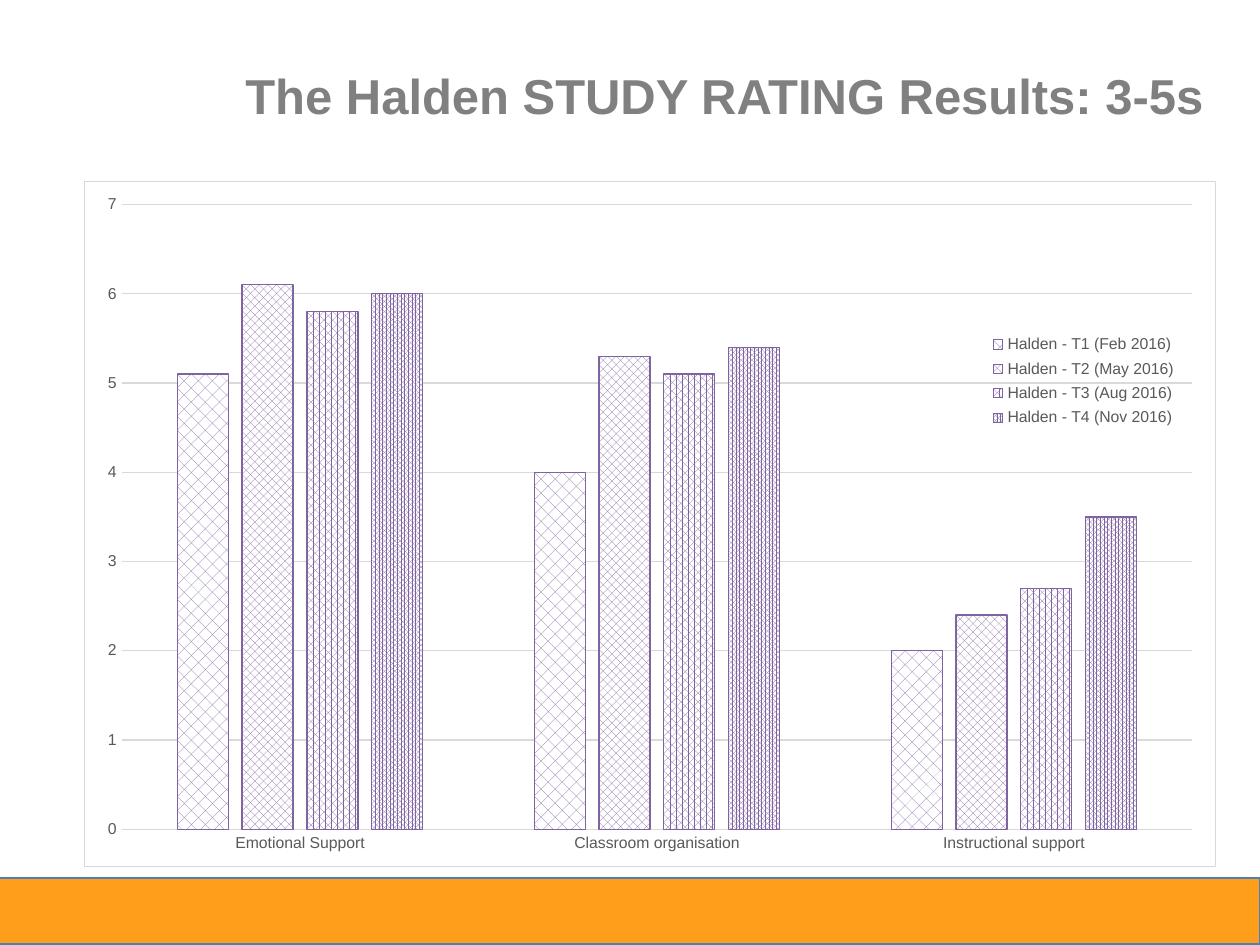
import pptx
import pptx.util
import pptx.chart.data
import pptx.dml.color
import pptx.enum.chart
import pptx.enum.dml
import pptx.enum.shapes
import pptx.oxml
import pptx.oxml.ns

SCALE = 914400 / 126
FONT = "Arial"
COLORS = {"bar": "FF9E1B", "edge": "4B7EBC", "title": "808080", "text": "595959",
          "grid": "D9D9D9", "ink": "8064A2", "white": "FFFFFF", "black": "000000"}
CATS = ["Emotional Support", "Classroom organisation", "Instructional support"]
PATS = pptx.enum.dml.MSO_PATTERN
SERIES = [
    ("Halden - T1 (Feb 2016)", (5.1, 4, 2), PATS.PERCENT_25),
    ("Halden - T2 (May 2016)", (6.1, 5.3, 2.4), PATS.PERCENT_50),
    ("Halden - T3 (Aug 2016)", (5.8, 5.1, 2.7), PATS.PERCENT_70),
    ("Halden - T4 (Nov 2016)", (6, 5.4, 3.5), PATS.PERCENT_80),
]


def px(num):
    return pptx.util.Emu(round(num * SCALE))


def place(box):
    return [px(num) for num in box]


def color(name):
    return pptx.dml.color.RGBColor.from_string(COLORS[name])


def style(font, size, name, bold=False):
    font.name = FONT
    font.size = pptx.util.Pt(size)
    font.bold = bold
    font.color.rgb = color(name)


def stroke(line, name):
    line.color.rgb = color(name)
    line.width = pptx.util.Pt(0.75)


def parse(xml):
    head, tail = xml.split(">", 1)
    close = "/" if head.endswith("/") else ""
    spaces = pptx.oxml.ns.nsdecls("a", "c")
    return pptx.oxml.parse_xml(f"{head.rstrip('/')} {spaces}{close}>{tail}")


def layout(box, part, inner=False):
    """Layout of a chart part, as shares of the chart box."""
    wide, high = box[2:]
    shares = zip("xywh", part, (wide, high, wide, high))
    rows = "".join(f'<c:{key} val="{num / full:.4f}"/>' for key, num, full in shares)
    kind = '<c:layoutTarget val="inner"/>' if inner else ""
    modes = '<c:xMode val="edge"/><c:yMode val="edge"/>'
    return parse(f"<c:layout><c:manualLayout>{kind}{modes}{rows}"
                 "</c:manualLayout></c:layout>")


def add_band(slide, box):
    band = slide.shapes.add_shape(pptx.enum.shapes.MSO_SHAPE.RECTANGLE, *place(box))
    band.fill.solid()
    band.fill.fore_color.rgb = color("bar")
    stroke(band.line, "edge")
    # Soft shadow below the band
    band.shadow.inherit = False
    glow = band.element.spPr.find(pptx.oxml.ns.qn("a:effectLst"))
    glow.append(parse(
        '<a:outerShdw blurRad="39400" dist="22900" dir="5400000" rotWithShape="0">'
        f'<a:srgbClr val="{COLORS["black"]}"><a:alpha val="35000"/></a:srgbClr>'
        "</a:outerShdw>"))


def add_title(slide, box, text):
    frame = slide.shapes.add_textbox(*place(box)).text_frame
    frame.word_wrap = True
    frame.text = text
    style(frame.paragraphs[0].runs[0].font, 28, "title", True)


def add_chart(slide, box):
    data = pptx.chart.data.CategoryChartData()
    data.categories = CATS
    for name, vals, pat in SERIES:
        data.add_series(name, vals)
    kind = pptx.enum.chart.XL_CHART_TYPE.COLUMN_CLUSTERED
    chart = slide.shapes.add_chart(kind, *place(box), data).chart
    chart.has_title = False
    style(chart.font, 10, "black")

    # Columns
    plot = chart.plots[0]
    plot.vary_by_categories = False
    plot.gap_width = 219
    plot.overlap = -27
    for item, (name, vals, pat) in zip(plot.series, SERIES):
        fill = item.format.fill
        fill.patterned()
        fill.pattern = pat
        fill.fore_color.rgb = color("ink")
        fill.back_color.rgb = color("white")
        stroke(item.format.line, "ink")

    # Axes
    cat, val = chart.category_axis, chart.value_axis
    for axis in (cat, val):
        axis.major_tick_mark = pptx.enum.chart.XL_TICK_MARK.NONE
        axis.minor_tick_mark = pptx.enum.chart.XL_TICK_MARK.NONE
        style(axis.tick_labels.font, 9, "text")
    stroke(cat.format.line, "grid")
    val.format.line.fill.background()
    val.minimum_scale, val.maximum_scale, val.major_unit = 0, 7, 1
    val.tick_labels.number_format = "0"
    val.tick_labels.number_format_is_linked = False
    val.has_major_gridlines = True
    stroke(val.major_gridlines.format.line, "grid")

    # Legend over the plot
    chart.has_legend = True
    legend = chart.legend
    legend.position = pptx.enum.chart.XL_LEGEND_POSITION.RIGHT
    legend.include_in_layout = True
    style(legend.font, 9, "text")

    # Places of plot and legend, then the frame of the chart
    qn = pptx.oxml.ns.qn
    root = chart.element
    for tag, part, inner in (("c:plotArea", (37, 23, 1072, 626), True),
                             ("c:legend", (904, 148, 192, 104), False)):
        area = root.find(".//" + qn(tag))
        for old in area.findall(qn("c:layout")):
            area.remove(old)
        spot = 0 if inner else 1
        area.insert(spot, layout(box, part, inner))
    root.find(qn("c:chart")).addnext(parse(
        f'<c:spPr><a:solidFill><a:srgbClr val="{COLORS["white"]}"/></a:solidFill>'
        f'<a:ln w="9525"><a:solidFill><a:srgbClr val="{COLORS["grid"]}"/>'
        "</a:solidFill></a:ln></c:spPr>"))


def main():
    deck = pptx.Presentation()
    deck.slide_width, deck.slide_height = px(1260), px(945)
    slide = deck.slides.add_slide(deck.slide_layouts[6])
    add_band(slide, (-1, 878, 1261, 66))
    add_title(slide, (233, 59, 999, 72), "The Halden STUDY RATING Results: 3-5s")
    add_chart(slide, (84, 181, 1132, 686))
    deck.save("out.pptx")


if __name__ == "__main__":
    main()
